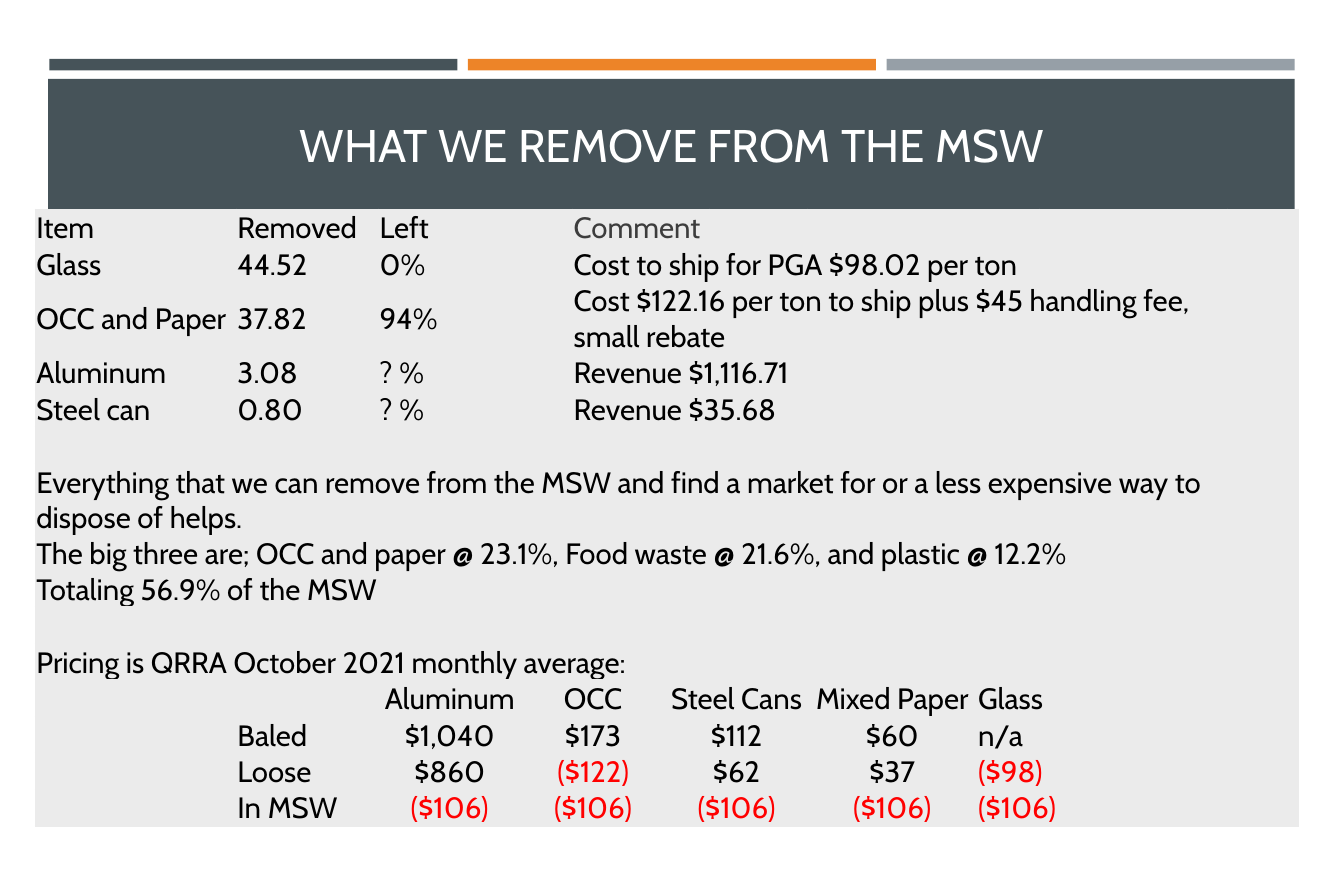
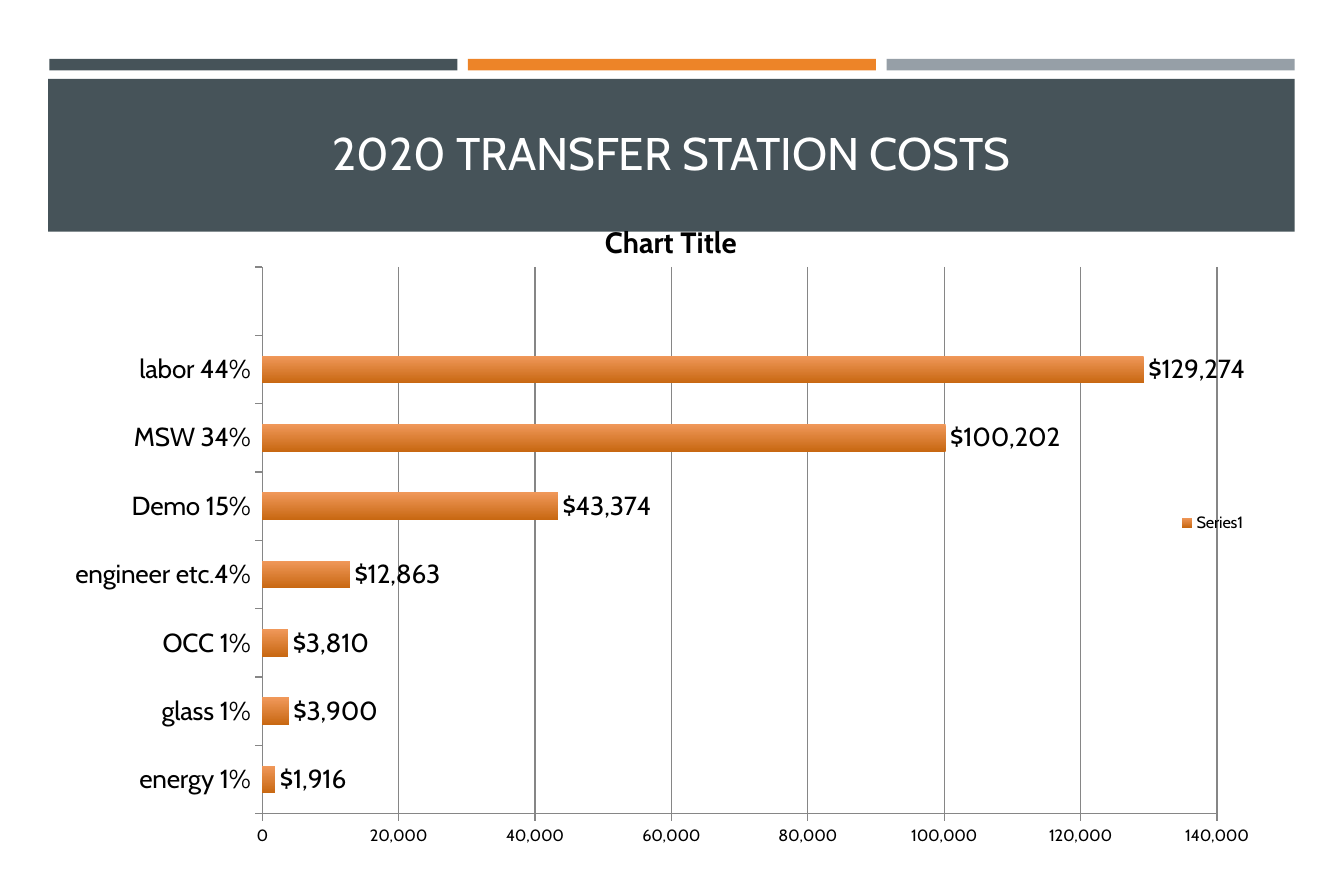
from dataclasses import dataclass
from typing import NamedTuple

from lxml.etree import SubElement
from pptx import Presentation
from pptx.chart.data import CategoryChartData
from pptx.dml.color import RGBColor
from pptx.enum.chart import XL_CHART_TYPE, XL_LABEL_POSITION, XL_LEGEND_POSITION, XL_TICK_MARK
from pptx.enum.shapes import MSO_SHAPE
from pptx.enum.text import MSO_ANCHOR, PP_ALIGN
from pptx.oxml.ns import qn
from pptx.util import Pt

PX = 9144  # EMU in one px, 100 px to the inch


@dataclass(frozen=True)
class Theme:
    font: str = "Cabin"
    slate: str = "465359"
    orange: str = "ED8428"
    grey: str = "969FA7"
    white: str = "FFFFFF"
    black: str = "000000"
    panel: str = "EBEBEB"
    muted: str = "3D3D3D"
    red: str = "FF0000"
    axis: str = "868686"
    bar_light: str = "F0985A"
    bar_dark: str = "C86812"
    title_size: int = 28
    body_size: int = 18
    label_size: int = 16
    small_size: int = 10


THEME = Theme()


class Box(NamedTuple):
    left: int
    top: int
    width: int
    height: int

    def emu(self):
        return [length * PX for length in self]


PAGE_WIDTH, PAGE_HEIGHT = 1143, 750
FRAME = Box(41, 50, 1060, 147)
TABLE = Box(30, 178, 1074, 525)
CHART = Box(61, 160, 1009, 569)

# Table: column widths, then rows of (height, cell spans, texts)
COLUMN_WIDTHS = [171, 121, 121, 44, 79, 37, 84, 121, 23, 53, 72, 88, 60]
REVENUE_SPANS = (1, 1, 2, 3, 1, 4, 1)
PRICE_SPANS = (1, 1, 1, 2, 2, 2, 2, 2)
FULL_SPAN = (13,)
FIRST_PRICE_ROW = 10
TABLE_ROWS = [
    (25, (1, 1, 2, 2, 1, 3, 2, 1), ["Item", "Removed", "Left", "Comment"]),
    (30, (1, 1, 2, 6, 2, 1), ["Glass", "44.52", "0%", "Cost to ship for PGA $98.02 per ton"]),
    (58, (1, 1, 2, 8, 1), ["OCC and Paper", "37.82", "94%",
                           "Cost $122.16 per ton to ship plus $45 handling fee, small rebate"]),
    (30, REVENUE_SPANS, ["Aluminum", "3.08", "? %", "Revenue $1,116.71"]),
    (30, REVENUE_SPANS, ["Steel can", "0.80", "? %", "Revenue $35.68"]),
    (30, (1, 1, 2, 1, 2, 1, 4, 1), []),
    (58, FULL_SPAN, ["Everything that we can remove from the MSW and find a market for "
                     "or a less expensive way to dispose of helps."]),
    (58, FULL_SPAN, ["The big three are; OCC and paper @ 23.1%, Food waste @ 21.6%, "
                     "and plastic @ 12.2%\nTotaling 56.9% of the MSW"]),
    (30, PRICE_SPANS, []),
    (30, (5, 2, 2, 2, 2), ["Pricing is QRRA October 2021 monthly average:"]),
    (30, PRICE_SPANS, ["", "", "Aluminum", "OCC", "Steel Cans", "Mixed Paper", "Glass"]),
    (30, PRICE_SPANS, ["", "Baled", "$1,040", "$173", "$112", "$60", "n/a"]),
    (30, PRICE_SPANS, ["", "Loose", "$860", "($122)", "$62", "$37", "($98)"]),
    (30, PRICE_SPANS, ["", "In MSW"] + ["($106)"] * 5),
]

COSTS = {
    "energy 1%": 1916,
    "glass 1%": 3900,
    "OCC 1%": 3810,
    "engineer etc.4%": 12863,
    "Demo 15%": 43374,
    "MSW 34%": 100202,
    "labor 44%": 129274,
    "": None,
}


def rgb(code):
    return RGBColor.from_string(code)


def style_font(font, size, color=THEME.black, bold=False):
    font.name = THEME.font
    font.size = Pt(size)
    font.bold = bold
    font.color.rgb = rgb(color)


def style_text(frame, size, color, align):
    for para in frame.paragraphs:
        para.alignment = align
        for span in para.runs:
            style_font(span.font, size, color)


def add_bar(page, box, color):
    bar = page.shapes.add_shape(MSO_SHAPE.RECTANGLE, *box.emu())
    bar.shadow.inherit = False
    bar.fill.solid()
    bar.fill.fore_color.rgb = rgb(color)
    bar.line.fill.background()


def add_frame(page, box, title, title_height, anchor):
    """Three strips above a title band."""
    strip_width, pitch = 347, 356
    for index, color in enumerate((THEME.slate, THEME.orange, THEME.grey)):
        add_bar(page, Box(box.left + 1 + index * pitch, box.top, strip_width, 10), color)
    add_bar(page, Box(box.left, box.top + 17, box.width, box.height - 17), THEME.slate)

    title_box = Box(box.left + 13, box.top + 27, box.width - 26, title_height)
    frame = page.shapes.add_textbox(*title_box.emu()).text_frame
    frame.word_wrap = True
    frame.vertical_anchor = anchor
    frame.text = title
    style_text(frame, THEME.title_size, THEME.white, PP_ALIGN.CENTER)


def style_cell(cell):
    """Panel fill, matching borders and narrow margins."""
    properties = cell._tc.get_or_add_tcPr()
    for side in ("a:lnL", "a:lnR", "a:lnT", "a:lnB"):
        line = SubElement(properties, qn(side), w=str(Pt(1)))
        fill = SubElement(line, qn("a:solidFill"))
        SubElement(fill, qn("a:srgbClr"), val=THEME.panel)
    cell.fill.solid()
    cell.fill.fore_color.rgb = rgb(THEME.panel)
    cell.margin_left = cell.margin_right = cell.margin_top = PX
    cell.margin_bottom = 0


def text_color(text):
    if text.startswith("("):
        return THEME.red
    return THEME.muted if text == "Comment" else THEME.black


def row_anchor(row):
    if row == 0:
        return MSO_ANCHOR.TOP
    return MSO_ANCHOR.BOTTOM if row >= FIRST_PRICE_ROW else MSO_ANCHOR.MIDDLE


def add_removal_table(page, box):
    table = page.shapes.add_table(len(TABLE_ROWS), len(COLUMN_WIDTHS), *box.emu()).table
    table.first_row = table.horz_banding = False
    for column, width in zip(table.columns, COLUMN_WIDTHS):
        column.width = width * PX
    for cell in table.iter_cells():
        style_cell(cell)

    for row, (height, spans, texts) in enumerate(TABLE_ROWS):
        table.rows[row].height = height * PX
        column = 0
        for index, width in enumerate(spans):
            cell = table.cell(row, column)
            if width > 1:
                cell.merge(table.cell(row, column + width - 1))
            column += width
            cell.vertical_anchor = row_anchor(row)
            text = texts[index] if index < len(texts) else ""
            if text:
                centred = row >= FIRST_PRICE_ROW and 2 <= index <= 5
                cell.text_frame.text = text
                style_text(cell.text_frame, THEME.body_size, text_color(text),
                           PP_ALIGN.CENTER if centred else PP_ALIGN.LEFT)


def place_in_chart(part, index, box, **lengths):
    """Fix a chart part at px lengths measured inside the chart box."""
    layout = part.find(qn("c:layout"))
    if layout is None:
        layout = part.makeelement(qn("c:layout"))
        part.insert(index, layout)
    manual = SubElement(layout, qn("c:manualLayout"))
    if "w" in lengths:
        SubElement(manual, qn("c:layoutTarget"), val="inner")
    for name in ("x", "y"):
        SubElement(manual, qn(f"c:{name}Mode"), val="edge")
    for name, length in lengths.items():
        whole = box.width if name in "xw" else box.height
        SubElement(manual, qn(f"c:{name}"), val=str(length / whole))


def style_axis(axis, size):
    axis.major_tick_mark = XL_TICK_MARK.OUTSIDE
    axis.format.line.color.rgb = rgb(THEME.axis)
    axis.format.line.width = Pt(0.75)
    style_font(axis.tick_labels.font, size)


def add_cost_chart(page, box):
    data = CategoryChartData(number_format="#,##0")
    data.categories = list(COSTS)
    data.add_series("Series1", list(COSTS.values()))
    chart = page.shapes.add_chart(XL_CHART_TYPE.BAR_CLUSTERED, *box.emu(), data).chart
    style_font(chart.font, THEME.small_size)

    # Title and plot area
    chart.has_title = True
    heading = chart.chart_title.text_frame
    heading.text = "Chart Title"
    style_font(heading.paragraphs[0].runs[0].font, THEME.body_size, bold=True)
    place_in_chart(chart.chart_title.element, 1, box, x=449, y=24)
    plot_area = chart.element.find(f"{qn('c:chart')}/{qn('c:plotArea')}")
    place_in_chart(plot_area, 0, box, x=162, y=67, w=812, h=465)

    # Axes
    style_axis(chart.category_axis, THEME.label_size)
    values = chart.value_axis
    style_axis(values, THEME.small_size)
    values.minimum_scale, values.maximum_scale, values.major_unit = 0, 140000, 20000
    values.tick_labels.number_format = "#,##0"
    values.tick_labels.number_format_is_linked = False
    values.has_major_gridlines = True
    values.major_gridlines.format.line.color.rgb = rgb(THEME.axis)
    values.major_gridlines.format.line.width = Pt(0.75)

    # Bars and their labels
    plot = chart.plots[0]
    plot.gap_width = 150
    plot.vary_by_categories = False
    fill = plot.series[0].format.fill
    fill.gradient()
    fill.gradient_angle = 270
    for stop, color in zip(fill.gradient_stops, (THEME.bar_light, THEME.bar_dark)):
        stop.color.rgb = rgb(color)
    plot.has_data_labels = True
    labels = plot.data_labels
    labels.show_value = True
    labels.number_format = "$#,##0"
    labels.number_format_is_linked = False
    labels.position = XL_LABEL_POSITION.OUTSIDE_END
    style_font(labels.font, THEME.label_size)

    # Legend
    chart.has_legend = True
    chart.legend.position = XL_LEGEND_POSITION.RIGHT
    chart.legend.include_in_layout = False
    style_font(chart.legend.font, THEME.small_size)


def main():
    deck = Presentation()
    deck.slide_width, deck.slide_height = PAGE_WIDTH * PX, PAGE_HEIGHT * PX
    blank = deck.slide_layouts[6]

    removal_page = deck.slides.add_slide(blank)
    add_frame(removal_page, FRAME, "WHAT WE REMOVE FROM THE MSW", 92, MSO_ANCHOR.MIDDLE)
    add_removal_table(removal_page, TABLE)

    cost_page = deck.slides.add_slide(blank)
    add_frame(cost_page, FRAME, "2020 TRANSFER STATION COSTS", 81, MSO_ANCHOR.BOTTOM)
    add_cost_chart(cost_page, CHART)

    deck.save("out.pptx")


if __name__ == "__main__":
    main()
